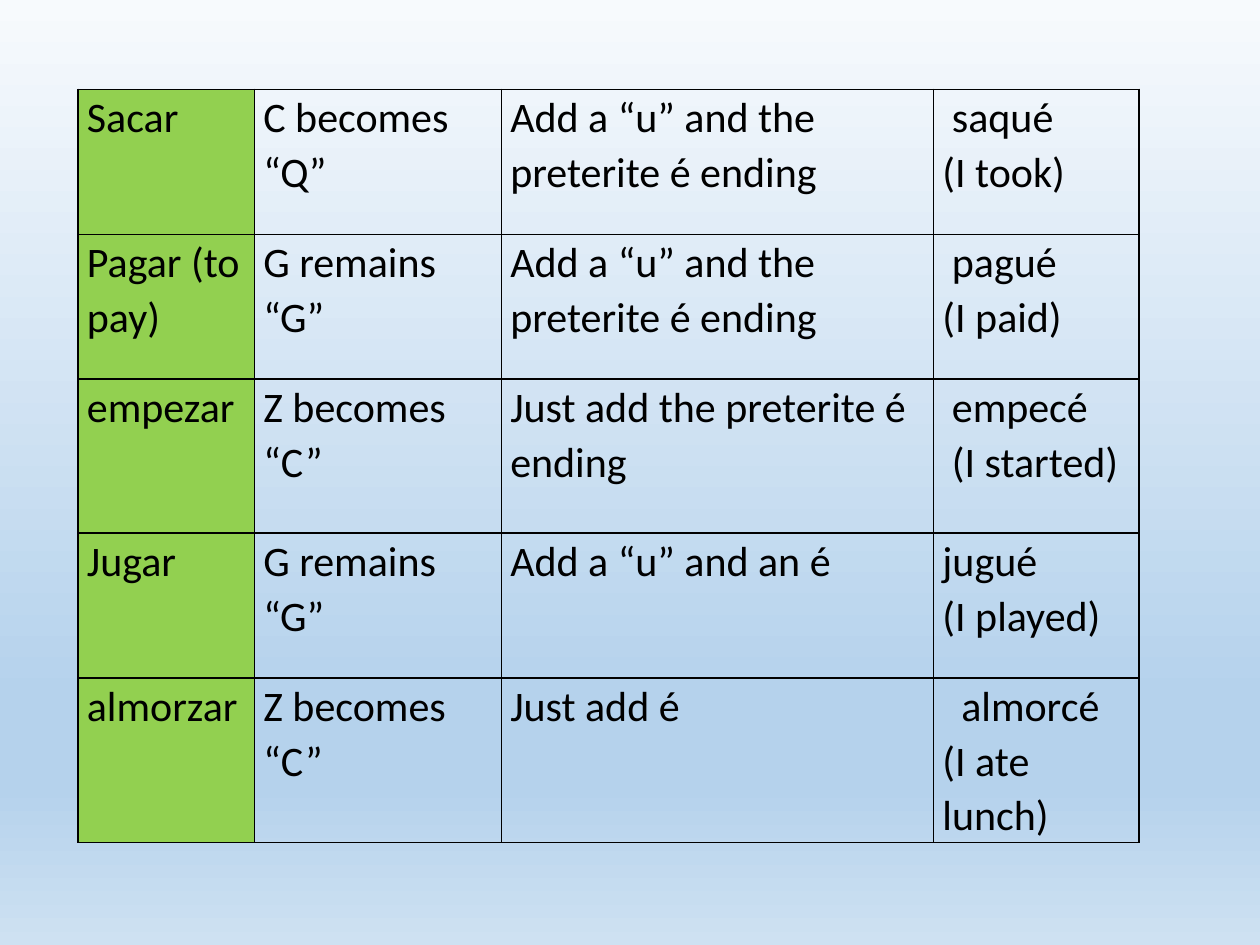
from pptx import Presentation
from pptx.dml.color import RGBColor
from pptx.oxml.ns import qn
from pptx.util import Inches, Pt
from lxml import etree

THEME = {
    "font": "Calibri", "size": 24, "ink": "000000", "verb": "92D050",
    "sky": [(0, "F7FAFD"), (74, "B5D2EC"), (83, "B5D2EC"), (100, "CEE1F2")],
}
COLS = [1.4, 1.96, 3.43, 1.63]
ROWS = [1.15, 1.15, 1.22, 1.15, 1.22]
LEFT, TOP = 0.62, 0.71
STEP = 0.075  # one indent step, in inches

# Each row: verb, stem change, ending, then (indent steps, line) pairs
VERBS = [
    ("Sacar", "C becomes “Q”", "Add a “u” and the preterite é ending",
     [(1, "saqué"), (0, "(I took)")]),
    ("Pagar (to pay)", "G remains “G”", "Add a “u” and the preterite é ending",
     [(1, "pagué"), (0, "(I paid)")]),
    ("empezar", "Z becomes “C”", "Just add the preterite é ending",
     [(1, "empecé"), (1, "(I started)")]),
    ("Jugar", "G remains “G”", "Add a “u” and an é",
     [(0, "jugué"), (0, "(I played)")]),
    ("almorzar", "Z becomes “C”", "Just add é",
     [(2, "almorcé"), (0, "(I ate lunch)")]),
]


def paint(node, color):
    """Add an RGB colour element under node."""
    etree.SubElement(node, qn("a:srgbClr"), val=color)


def write(cell, lines):
    """Fill a cell with (indent steps, text) lines."""
    cell.margin_left = cell.margin_right = Inches(0.07)
    cell.margin_top = cell.margin_bottom = 0
    frame = cell.text_frame
    for i, (steps, text) in enumerate(lines):
        para = frame.add_paragraph() if i else frame.paragraphs[0]
        para.line_spacing = 1.07
        if steps:
            para._p.get_or_add_pPr().set("marL", str(Inches(steps * STEP)))
        run = para.add_run()
        run.text = text
        run.font.name = THEME["font"]
        run.font.size = Pt(THEME["size"])
        run.font.color.rgb = RGBColor.from_string(THEME["ink"])


deck = Presentation()
deck.slide_width, deck.slide_height = Inches(10), Inches(7.5)
slide = deck.slides.add_slide(deck.slide_layouts[6])

# Background: four-stop gradient, top to bottom
back = slide.background.fill
back.gradient()
back.gradient_angle = 270
stops = slide.element.find(".//" + qn("a:gsLst"))
for stop in list(stops):
    stops.remove(stop)
for share, color in THEME["sky"]:
    paint(etree.SubElement(stops, qn("a:gs"), pos=str(share * 1000)), color)

# Table grid
table = slide.shapes.add_table(
    len(ROWS), len(COLS), Inches(LEFT), Inches(TOP),
    Inches(sum(COLS)), Inches(sum(ROWS))).table
table.first_row = table.horz_banding = False
for col, width in zip(table.columns, COLS):
    col.width = Inches(width)
for row, height in zip(table.rows, ROWS):
    row.height = Inches(height)

# Cells: text, borders, then fill
for r, (verb, stem, ending, forms) in enumerate(VERBS):
    for c, lines in enumerate([[(0, verb)], [(0, stem)], [(0, ending)], forms]):
        cell = table.cell(r, c)
        write(cell, lines)
        props = cell._tc.get_or_add_tcPr()
        for side in ("lnL", "lnR", "lnT", "lnB"):
            line = etree.SubElement(props, qn("a:" + side), w=str(Pt(1)))
            paint(etree.SubElement(line, qn("a:solidFill")), THEME["ink"])
        if c == 0:
            cell.fill.solid()
            cell.fill.fore_color.rgb = RGBColor.from_string(THEME["verb"])
        else:
            cell.fill.background()

deck.save("out.pptx")
